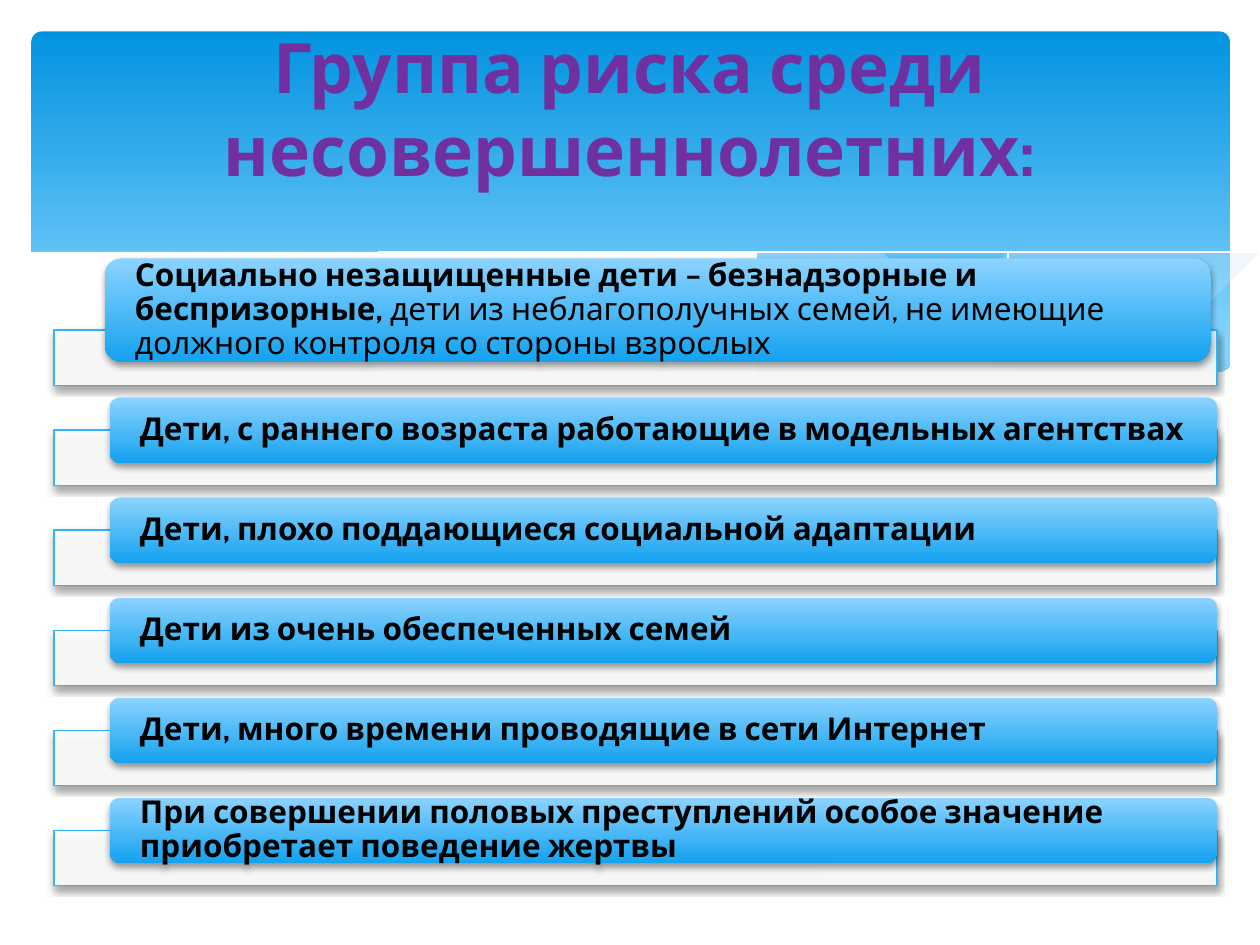
from dataclasses import dataclass
from typing import Optional

from lxml.etree import SubElement
from pptx import Presentation
from pptx.dml.color import RGBColor
from pptx.enum.shapes import MSO_SHAPE
from pptx.enum.text import MSO_ANCHOR, PP_ALIGN
from pptx.oxml.ns import qn
from pptx.util import Inches, Pt


@dataclass(frozen=True)
class Theme:
    font: str = "Cabin"
    title_size: float = 39.6
    body_size: float = 18
    title: str = "7030A0"
    text: str = "000000"
    white: str = "FFFFFF"
    wave: str = "C6E7FC"
    outline: str = "31B6FD"
    header_gradient: tuple = ((0, "0293E0"), (0.9, "83D3FE"))
    label_gradient: tuple = ((0, "8CD3FF"), (1, "14A2EF"))


@dataclass(frozen=True)
class Box:
    left: float
    top: float
    width: float
    height: float

    def lengths(self) -> tuple:
        return tuple(Inches(v) for v in (self.left, self.top, self.width, self.height))


@dataclass(frozen=True)
class Wave:
    edges: tuple  # each edge is a smooth curve through its knots
    fill: Optional[str] = None  # without a fill the wave is an open white line
    opacity: int = 100


@dataclass(frozen=True)
class RiskGroup:
    bold: str
    regular: str = ""
    label: Optional[Box] = None  # replaces the regular place in the list


THEME = Theme()

WAVES = (
    Wave((((9.76, 2), (8.61, 2.23), (6.61, 2.65)),
          ((6.61, 2.65), (8.1, 2.78), (9.76, 2.47))), THEME.wave, 29),
    Wave((((8.93, 2.73), (7.75, 2.54), (6.29, 2.22), (4.65, 1.91), (2.86, 1.91)),
          ((2.86, 1.91), (4.49, 2.22), (6.5, 2.64), (8.93, 2.73))), THEME.wave, 40),
    Wave((((3.09, 1.95), (4.16, 1.87), (5.82, 2), (7.27, 2.26), (9.07, 2.72)),)),
    Wave((((6.13, 2.57), (8.06, 2.1), (9.75, 1.85)),)),
    Wave((((9.77, 2.46), (8.23, 2.77), (6.26, 2.58), (4.18, 2.13), (2.92, 1.9),
           (1.77, 1.84), (0.85, 1.93), (0.23, 2.13)),
          ((0.23, 3.29), (9.77, 3.29))), THEME.white),
)
CURVE_STEPS = 8

GROUPS = (
    RiskGroup("Социально незащищенные дети – безнадзорные и беспризорные, ",
              "дети из неблагополучных семей, не имеющие должного контроля со стороны взрослых",
              Box(0.83, 2.05, 8.78, 0.82)),
    RiskGroup("Дети, с раннего возраста работающие в модельных агентствах"),
    RiskGroup("Дети, плохо поддающиеся социальной адаптации"),
    RiskGroup("Дети из очень обеспеченных семей"),
    RiskGroup("Дети, много времени проводящие в сети Интернет"),
    RiskGroup("При совершении половых преступлений особое значение приобретает поведение жертвы"),
)
FIRST_TOP, LAST_TOP = 2.62, 6.59
PITCH = (LAST_TOP - FIRST_TOP) / (len(GROUPS) - 1)
LABEL_RISE = 0.26


def rgb(color: str) -> RGBColor:
    return RGBColor.from_string(color)


def smooth(knots: tuple) -> list:
    """Points on a Catmull-Rom curve through the knots."""
    padded = (knots[0], *knots, knots[-1])
    points = [knots[0]]
    for a, b, c, d in zip(padded, padded[1:], padded[2:], padded[3:]):
        for step in range(1, CURVE_STEPS + 1):
            t = step / CURVE_STEPS
            points.append(tuple(
                q + t / 2 * (r - p + t * (2 * p - 5 * q + 4 * r - s
                                          + t * (3 * (q - r) + s - p)))
                for p, q, r, s in zip(a, b, c, d)))
    return points


def fill_solid(shape, color: str, opacity: int = 100) -> None:
    shape.fill.solid()
    shape.fill.fore_color.rgb = rgb(color)
    if opacity < 100:
        color_node = shape._element.spPr.find(qn("a:solidFill"))[0]
        SubElement(color_node, qn("a:alpha"), val=str(opacity * 1000))


def fill_gradient(shape, stops: tuple) -> None:
    shape.fill.gradient()
    shape.fill.gradient_angle = 270  # counter-clockwise: top to bottom
    for stop, (position, color) in zip(shape.fill.gradient_stops, stops):
        stop.position = position
        stop.color.rgb = rgb(color)


def add_shadow(shape) -> None:
    effects = shape._element.spPr.find(qn("a:effectLst"))
    shadow = SubElement(effects, qn("a:outerShdw"), blurRad=str(Pt(4)), dist=str(Pt(2)),
                        dir="5400000", algn="ctr", rotWithShape="0")
    color_node = SubElement(shadow, qn("a:srgbClr"), val="000000")
    SubElement(color_node, qn("a:alpha"), val="38000")


def add_plain_shape(page, kind: MSO_SHAPE, box: Box):
    shape = page.shapes.add_shape(kind, *box.lengths())
    shape.shadow.inherit = False
    shape.line.fill.background()
    return shape


def set_font(para, size: float, color: str) -> None:
    para.font.name = THEME.font
    para.font.size = Pt(size)
    para.font.color.rgb = rgb(color)


def add_wave(page, wave: Wave) -> None:
    start, *others = [point for edge in wave.edges for point in smooth(edge)]
    builder = page.shapes.build_freeform(*start, scale=Inches(1))
    builder.add_line_segments(others, close=wave.fill is not None)
    shape = builder.convert_to_shape()
    shape.shadow.inherit = False
    if wave.fill:
        fill_solid(shape, wave.fill, wave.opacity)
        shape.line.fill.background()
    else:
        shape.fill.background()
        shape.line.color.rgb = rgb(THEME.white)
        shape.line.width = Pt(0)


def add_title(page, text: str) -> None:
    frame = page.shapes.add_textbox(*Box(0.5, 0.37, 9, 0.96).lengths()).text_frame
    frame.word_wrap = True
    frame.vertical_anchor = MSO_ANCHOR.MIDDLE
    para = frame.paragraphs[0]
    para.alignment = PP_ALIGN.CENTER
    set_font(para, THEME.title_size, THEME.title)
    para.font.bold = True
    para.add_run().text = text


def add_group(page, group: RiskGroup, top: float) -> None:
    # Pale bar behind the label
    bar = add_plain_shape(page, MSO_SHAPE.RECTANGLE, Box(0.43, top, 9.23, 0.44))
    fill_solid(bar, THEME.white, 90)
    bar.line.color.rgb = rgb(THEME.outline)
    bar.line.width = Pt(0.75)
    add_shadow(bar)

    # Rounded label with its text
    box = group.label or Box(0.87, top - LABEL_RISE, 8.79, 0.52)
    label = add_plain_shape(page, MSO_SHAPE.ROUNDED_RECTANGLE, box)
    fill_gradient(label, THEME.label_gradient)
    add_shadow(label)
    frame = label.text_frame
    frame.word_wrap = True
    frame.vertical_anchor = MSO_ANCHOR.MIDDLE
    # The rounded corner already insets the text slightly
    corner = 0.29 * box.height / 6
    frame.margin_left = frame.margin_right = Inches(0.24 - corner)
    frame.margin_top = frame.margin_bottom = 0
    para = frame.paragraphs[0]
    para.alignment = PP_ALIGN.LEFT
    para.line_spacing = 0.9
    set_font(para, THEME.body_size, THEME.text)
    for text, bold in ((group.bold, True), (group.regular, False)):
        if text:
            span = para.add_run()
            span.text = text
            span.font.bold = bold


def main() -> None:
    deck = Presentation()
    deck.slide_width, deck.slide_height = Inches(10), Inches(7.5)
    page = deck.slides.add_slide(deck.slide_layouts[6])

    # Header with waves
    header = add_plain_shape(page, MSO_SHAPE.ROUNDED_RECTANGLE, Box(0.25, 0.25, 9.51, 2.7))
    header.adjustments[0] = 0.03
    fill_gradient(header, THEME.header_gradient)
    for wave in WAVES:
        add_wave(page, wave)
    add_title(page, "Группа риска среди несовершеннолетних:")

    # List of risk groups
    for index, group in enumerate(GROUPS):
        add_group(page, group, FIRST_TOP + index * PITCH)

    deck.save("out.pptx")


if __name__ == "__main__":
    main()
